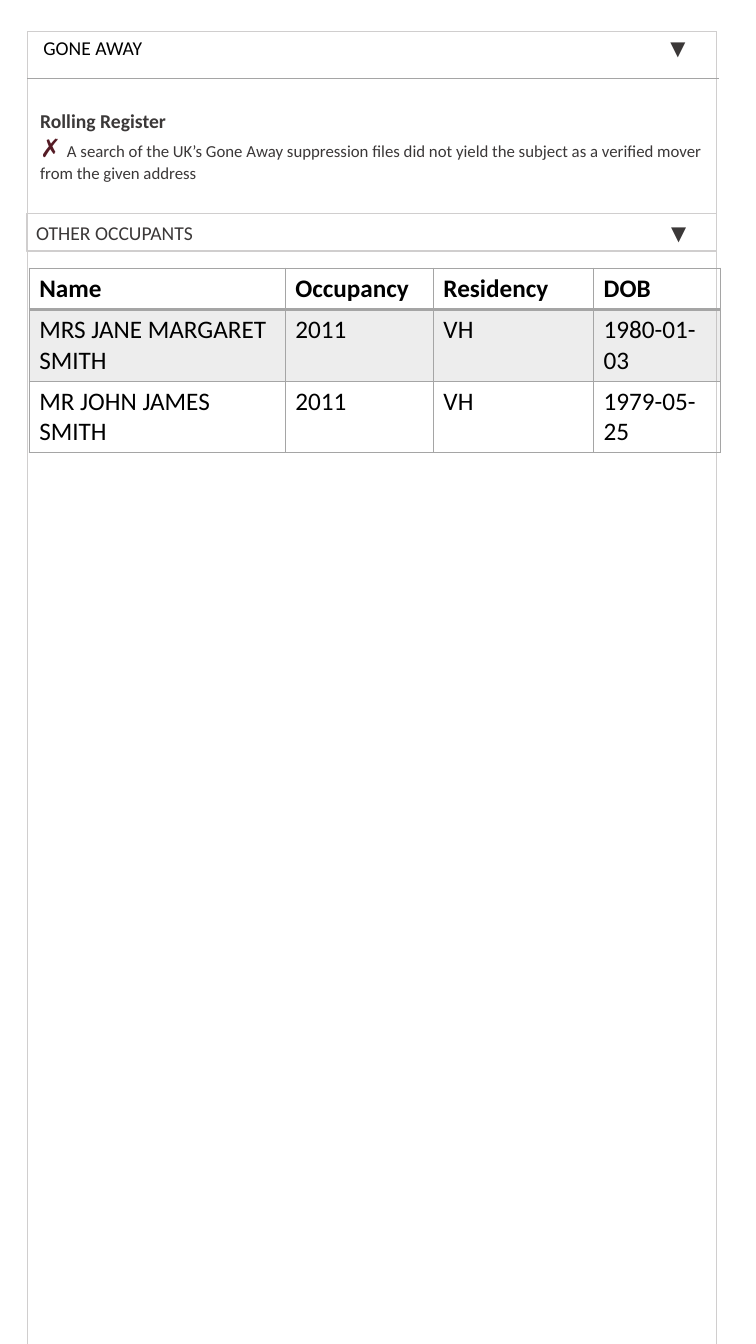
from dataclasses import dataclass

from pptx import Presentation
from pptx import util as u
from pptx.dml.color import RGBColor
from pptx.enum import shapes, text
from pptx.oxml.ns import qn
from lxml import etree

WIDTH, HEIGHT = u.Inches(7.5), u.Inches(13.33)
COLUMNS, ROWS = 75, 133.3
LEFT, RIGHT, TOP = 2.7, 71.1, 3.1


@dataclass(frozen=True)
class Theme:
    font: str = "Calibri"
    ink: str = "000000"
    grey_ink: str = "3B3838"
    cross: str = "551B25"
    frame: str = "D0CECE"
    rule: str = "A5A5A5"
    large: int = 18
    medium: int = 14
    small: int = 12
    thin: float = 0.5
    outline: float = 0.75
    border: int = 1
    heavy: int = 2
    band_alpha: int = 20


THEME = Theme()

OCCUPANTS = [
    ["Name", "Occupancy", "Residency", "DOB"],
    ["MRS JANE MARGARET SMITH", "2011", "VH", "1980-01-03"],
    ["MR JOHN JAMES SMITH", "2011", "VH", "1979-05-25"],
]
OCCUPANT_COLUMNS = [25.4, 14.7, 15.9, 12.6]
OCCUPANT_ROW = 4.1


def across(columns):
    return round(WIDTH * columns / COLUMNS)


def down(rows):
    return round(HEIGHT * rows / ROWS)


def area(left, top, width, height):
    return across(left), down(top), across(width), down(height)


def assign(target, **values):
    for name, value in values.items():
        setattr(target, name, value)


def write(para, content, size, colour, bold=False):
    span = para.add_run()
    span.text = content
    assign(span.font, name=THEME.font, size=u.Pt(size), bold=bold)
    span.font.color.rgb = RGBColor.from_string(colour)


def start_text(box, anchor=text.MSO_ANCHOR.TOP):
    frame = box.text_frame
    assign(frame, word_wrap=True, auto_size=text.MSO_AUTO_SIZE.NONE,
           vertical_anchor=anchor)
    para = frame.paragraphs[0]
    para.alignment = text.PP_ALIGN.LEFT
    return para


def write_heading(para, label, label_colour, arrow_column):
    stops = etree.SubElement(para._p.get_or_add_pPr(), qn("a:tabLst"))
    etree.SubElement(stops, qn("a:tab"), pos=str(across(arrow_column)), algn="l")
    write(para, label + "\t", THEME.medium, label_colour)
    write(para, "▼", THEME.medium, THEME.grey_ink)


def add_line(page, start, end, colour):
    line = page.shapes.add_connector(
        shapes.MSO_CONNECTOR.STRAIGHT,
        across(start[0]), down(start[1]), across(end[0]), down(end[1]))
    line.line.color.rgb = RGBColor.from_string(colour)
    line.line.width = u.Pt(THEME.thin)
    etree.SubElement(line._element.spPr, qn("a:effectLst"))


def add_title(page):
    title = page.shapes.title
    left, top, width, height = area(3.3, TOP, 68, 3.4)
    assign(title, left=left, top=top, width=width, height=height)
    write_heading(start_text(title), "GONE AWAY", THEME.ink, 62.2)


def add_section_bar(page, label):
    bar = page.shapes.add_shape(
        shapes.MSO_SHAPE.RECTANGLE, *area(2.6, 21.2, 68.5, 3.7))
    bar.shadow.inherit = False
    bar.fill.background()
    bar.line.color.rgb = RGBColor.from_string(THEME.frame)
    bar.line.width = u.Pt(THEME.outline)
    para = start_text(bar, text.MSO_ANCHOR.MIDDLE)
    write_heading(para, label, THEME.grey_ink, 63)


def add_register_note(page):
    box = page.shapes.add_textbox(*area(3, 10.3, 69.3, 8.4))
    write(start_text(box), "Rolling Register",
          THEME.medium, THEME.grey_ink, bold=True)
    para = box.text_frame.add_paragraph()
    write(para, "✗ ", THEME.large, THEME.cross)
    write(para, "A search of the UK’s Gone Away suppression files did not yield "
          "the subject as a verified mover from the given address",
          THEME.small, THEME.grey_ink)


def set_borders(cell, widths):
    properties = cell._tc.get_or_add_tcPr()
    for side, width in widths.items():
        line = etree.SubElement(properties, qn("a:ln" + side), w=str(u.Pt(width)))
        fill = etree.SubElement(line, qn("a:solidFill"))
        etree.SubElement(fill, qn("a:srgbClr"), val=THEME.rule)


def fill_band(cell):
    cell.fill.solid()
    cell.fill.fore_color.rgb = RGBColor.from_string(THEME.rule)
    colour = cell._tc.tcPr.find(qn("a:solidFill"))[0]
    etree.SubElement(colour, qn("a:alpha"), val=str(THEME.band_alpha * 1000))


def add_occupants(page):
    table = page.shapes.add_table(
        len(OCCUPANTS), len(OCCUPANT_COLUMNS),
        *area(2.9, 26.6, sum(OCCUPANT_COLUMNS),
              OCCUPANT_ROW * len(OCCUPANTS))).table
    table.horz_banding = False
    for column, width in zip(table.columns, OCCUPANT_COLUMNS):
        column.width = across(width)
    for index, values in enumerate(OCCUPANTS):
        table.rows[index].height = down(OCCUPANT_ROW)
        widths = dict.fromkeys("LRTB", THEME.border)
        if index < 2:
            widths["B" if index == 0 else "T"] = THEME.heavy
        for cell, value in zip(table.rows[index].cells, values):
            set_borders(cell, widths)
            if index % 2:
                fill_band(cell)
            else:
                cell.fill.background()
            write(cell.text_frame.paragraphs[0], value,
                  THEME.large, THEME.ink, bold=index == 0)


def main():
    deck = Presentation()
    assign(deck, slide_width=WIDTH, slide_height=HEIGHT)
    page = deck.slides.add_slide(deck.slide_layouts.get_by_name("Title Only"))
    add_section_bar(page, "OTHER OCCUPANTS")
    add_line(page, (LEFT, TOP), (RIGHT, TOP), THEME.frame)
    for edge in (LEFT, RIGHT):
        add_line(page, (edge, TOP), (edge, ROWS), THEME.frame)
    add_occupants(page)
    add_title(page)
    add_line(page, (LEFT, 7.8), (71.3, 7.8), THEME.rule)
    add_register_note(page)
    deck.save("out.pptx")


if __name__ == "__main__":
    main()
